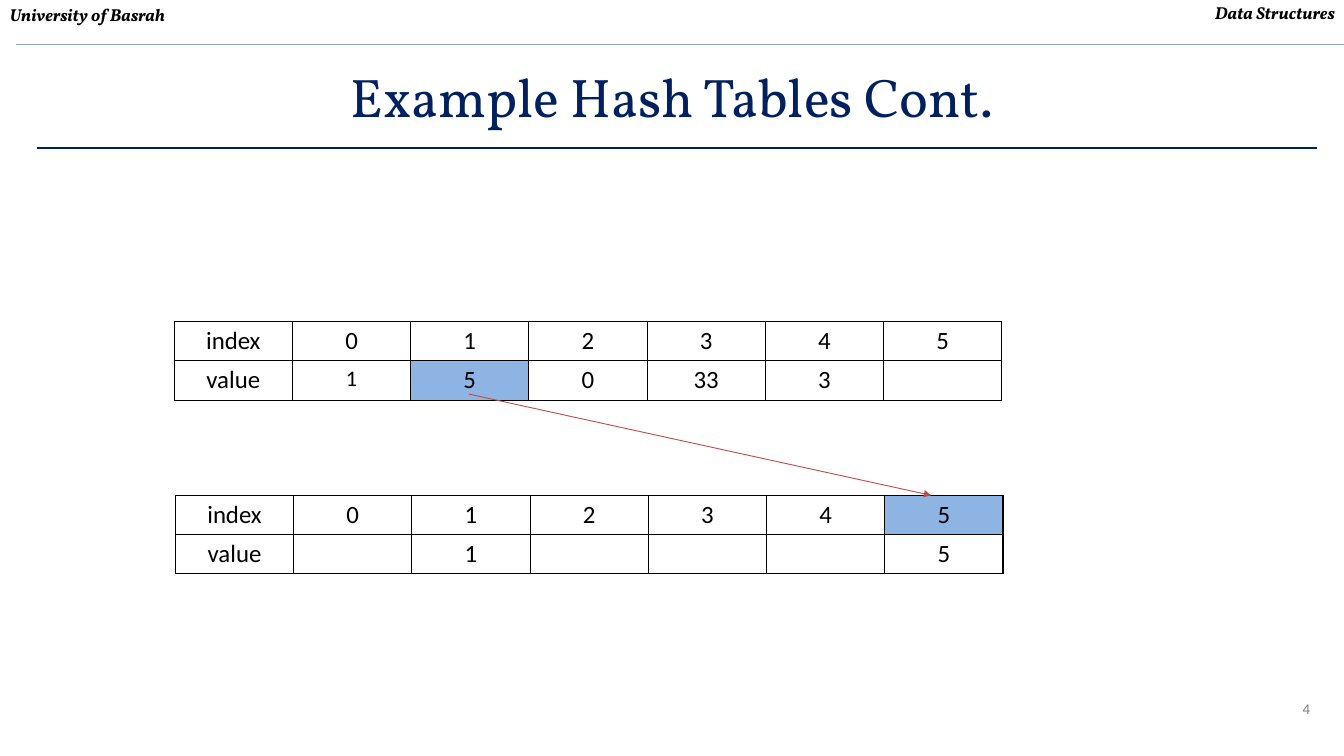
from collections import namedtuple

from lxml import etree
from pptx import Presentation
from pptx.dml.color import RGBColor
from pptx.enum.shapes import MSO_CONNECTOR
from pptx.enum.text import MSO_ANCHOR, PP_ALIGN
from pptx.oxml.ns import qn
from pptx.util import Pt

LEFT, CENTER, RIGHT = PP_ALIGN.LEFT, PP_ALIGN.CENTER, PP_ALIGN.RIGHT
TOP, MIDDLE = MSO_ANCHOR.TOP, MSO_ANCHOR.MIDDLE
STRAIGHT = MSO_CONNECTOR.STRAIGHT

BLACK = RGBColor(0x00, 0x00, 0x00)
WHITE = RGBColor(0xFF, 0xFF, 0xFF)
GRAY = RGBColor(0x80, 0x80, 0x80)
NAVY = RGBColor(0x00, 0x20, 0x60)
PALE_BLUE = RGBColor(0x8A, 0xA6, 0xDC)
HIGHLIGHT = RGBColor(0x8E, 0xB4, 0xE3)
RED = RGBColor(0xBF, 0x4C, 0x48)

PAGE_WIDTH, PAGE_HEIGHT = 1087.92, 612
Box = namedtuple("Box", "left top width height")

HEADER = {"name": "Vollkorn", "size": Pt(14), "bold": True, "italic": True}
TITLE = {"name": "Vollkorn", "size": Pt(44)}
NUMBER = {"name": "Calibri", "size": Pt(12)}
CELL = {"name": "Calibri", "size": Pt(20.1), "bold": False}

INDEX_ROW = ["index", "0", "1", "2", "3", "4", "5"]


def set_font(font, formats, color):
    for name, value in formats.items():
        setattr(font, name, value)
    font.color.rgb = color


def add_text(page, box, text, formats, color, align, anchor=TOP):
    frame = page.shapes.add_textbox(*map(Pt, box)).text_frame
    frame.word_wrap = True
    frame.vertical_anchor = anchor
    para = frame.paragraphs[0]
    para.alignment = align
    span = para.add_run()
    span.text = text
    set_font(span.font, formats, color)


def add_line(page, start, end, color, width, arrow=False):
    line = page.shapes.add_connector(STRAIGHT, *map(Pt, (*start, *end)))
    line.line.color.rgb = color
    line.line.width = Pt(width)
    if arrow:
        outline = line.line._get_or_add_ln()
        etree.SubElement(outline, qn("a:tailEnd"), type="triangle")
    etree.SubElement(line._element.spPr, qn("a:effectLst"))


def add_cell_borders(cell):
    properties = cell._tc.get_or_add_tcPr()
    for position, side in enumerate(("lnL", "lnR", "lnT", "lnB")):
        border = etree.Element(qn(f"a:{side}"), w=str(Pt(1)))
        fill = etree.SubElement(border, qn("a:solidFill"))
        etree.SubElement(fill, qn("a:srgbClr"), val=str(BLACK))
        properties.insert(position, border)


def add_hash_table(page, box, values, highlighted, sizes=None):
    """Draw the index row over the value row; sizes overrides font sizes by cell."""
    rows = [INDEX_ROW, ["value", *values]]
    table = page.shapes.add_table(len(rows), len(INDEX_ROW), *map(Pt, box)).table
    table.first_row = table.horz_banding = False
    for column in table.columns:
        column.width = Pt(box.width / len(INDEX_ROW))
    for row_number, texts in enumerate(rows):
        table.rows[row_number].height = Pt(box.height / len(rows))
        for column_number, text in enumerate(texts):
            place = (row_number, column_number)
            cell = table.cell(*place)
            cell.fill.solid()
            cell.fill.fore_color.rgb = HIGHLIGHT if place == highlighted else WHITE
            add_cell_borders(cell)
            para = cell.text_frame.paragraphs[0]
            para.alignment = CENTER
            if text:
                span = para.add_run()
                span.text = text
                size = (sizes or {}).get(place, CELL["size"])
                set_font(span.font, {**CELL, "size": size}, BLACK)


def add_frame(page, box, number):
    """Place the running header, its rule and the page number."""
    right = box.left + box.width
    bottom = box.top + box.height
    add_text(page, Box(box.left, box.top - 2, box.width, 24.5),
             "Data Structures", HEADER, BLACK, RIGHT)
    add_line(page, (box.left + 13, box.top + 36), (right, box.top + 36), PALE_BLUE, 1.5)
    add_text(page, Box(box.left + 0.7, box.top, 565, 24.5),
             "University of Basrah", HEADER, BLACK, LEFT)
    add_text(page, Box(right - 140.4, bottom - 49, 120.2, 50),
             number, NUMBER, GRAY, RIGHT)


def add_title(page, box, text):
    bottom = box.top + box.height
    add_text(page, box, text, TITLE, NAVY, CENTER, MIDDLE)
    add_line(page, (box.left + 30, bottom + 0.7),
             (box.left + box.width - 21.5, bottom + 0.7), NAVY, 2)


def add_example(page, box):
    """Place the source table, the hash table and the arrow between them."""
    table_width, table_height = 670, 63.6
    add_hash_table(page, Box(box.left, box.top, table_width, table_height),
                   ["1", "5", "0", "33", "3", ""], (1, 2), {(1, 1): Pt(18)})
    lower_top = box.top + box.height - table_height
    add_hash_table(page, Box(box.left + 1, lower_top, table_width, table_height),
                   ["", "1", "", "", "", "5"], (0, 6))
    add_line(page, (box.left + 238.4, box.top + 58.6),
             (box.left + 612.8, lower_top), RED, 0.75, arrow=True)


def main():
    deck = Presentation()
    deck.slide_width, deck.slide_height = Pt(PAGE_WIDTH), Pt(PAGE_HEIGHT)
    page = deck.slides.add_slide(deck.slide_layouts[6])
    add_frame(page, Box(0, 0, PAGE_WIDTH, PAGE_HEIGHT), "4")
    add_title(page, Box(0, 36, PAGE_WIDTH, 83), "Example Hash Tables Cont.")
    add_example(page, Box(141, 260.4, 671, 204.2))
    deck.save("out.pptx")


if __name__ == "__main__":
    main()
